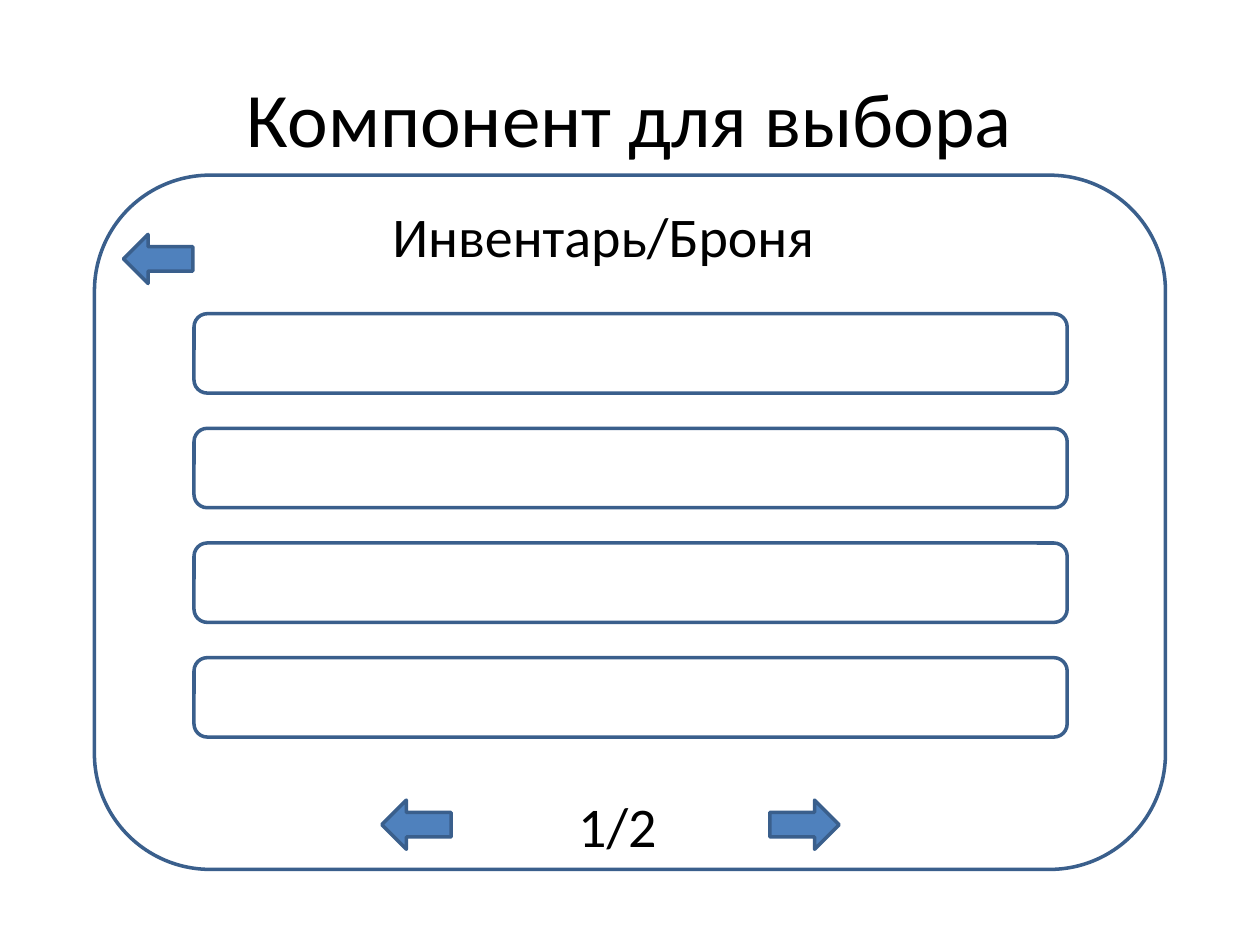
from dataclasses import dataclass
from typing import Optional

from pptx import Presentation
from pptx.dml.color import RGBColor
from pptx.enum.shapes import MSO_SHAPE as Shape
from pptx.enum.text import MSO_ANCHOR as Anchor, MSO_AUTO_SIZE as AutoSize, PP_ALIGN as Align
from pptx.slide import Slide
from pptx.util import Emu, Pt

EMU_PER_PX = 9144


@dataclass(frozen=True)
class Theme:
    font: str = "Calibri"
    text: RGBColor = RGBColor(0x00, 0x00, 0x00)
    accent: RGBColor = RGBColor(0x4F, 0x81, 0xBD)
    outline: RGBColor = RGBColor(0x3A, 0x5F, 0x8C)
    title_size: int = 44
    label_size: int = 32
    line_width: int = 2


@dataclass(frozen=True)
class Box:
    left: int
    top: int
    width: int
    height: int

    def emu(self) -> tuple[Emu, ...]:
        return tuple(px(value) for value in (self.left, self.top, self.width, self.height))


@dataclass(frozen=True)
class Figure:
    kind: Shape
    box: Box
    fill: Optional[RGBColor] = None


@dataclass(frozen=True)
class Label:
    text: str
    box: Box
    align: Align


THEME = Theme()
TITLE = Label("Компонент для выбора", Box(50, 30, 900, 125), Align.CENTER)
LABELS = [
    Label("Инвентарь/Броня", Box(294, 155, 370, 64), Align.CENTER),
    Label("1/2", Box(449, 623, 102, 64), Align.LEFT),
]
PANEL = Figure(Shape.ROUNDED_RECTANGLE, Box(75, 139, 850, 551))
ROW_COUNT, ROW_TOP, ROW_PITCH = 4, 249, 91
ROWS = [
    Figure(Shape.ROUNDED_RECTANGLE, Box(154, ROW_TOP + index * ROW_PITCH, 693, 63))
    for index in range(ROW_COUNT)
]
ARROWS = [
    Figure(kind, Box(left, top, 55, 39), THEME.accent)
    for kind, left, top in (
        (Shape.LEFT_ARROW, 98, 186),
        (Shape.LEFT_ARROW, 303, 635),
        (Shape.RIGHT_ARROW, 611, 635),
    )
]


def px(value: int) -> Emu:
    return Emu(value * EMU_PER_PX)


def write_text(shape, label: Label, size: int) -> None:
    shape.text_frame.text = label.text
    paragraph = shape.text_frame.paragraphs[0]
    paragraph.alignment = label.align
    paragraph.font.name = THEME.font
    paragraph.font.size = Pt(size)
    paragraph.font.color.rgb = THEME.text


def set_title(slide: Slide, label: Label) -> None:
    title = slide.shapes.title
    title.left, title.top, title.width, title.height = label.box.emu()
    title.text_frame.vertical_anchor = Anchor.MIDDLE
    write_text(title, label, THEME.title_size)


def draw_label(slide: Slide, label: Label) -> None:
    shape = slide.shapes.add_textbox(*label.box.emu())
    shape.text_frame.word_wrap = True
    shape.text_frame.auto_size = AutoSize.SHAPE_TO_FIT_TEXT
    write_text(shape, label, THEME.label_size)


def draw_figure(slide: Slide, figure: Figure) -> None:
    shape = slide.shapes.add_shape(figure.kind, *figure.box.emu())
    shape.shadow.inherit = False
    if figure.fill is None:
        shape.fill.background()
    else:
        shape.fill.solid()
        shape.fill.fore_color.rgb = figure.fill
    shape.line.color.rgb = THEME.outline
    shape.line.width = Pt(THEME.line_width)


def main() -> None:
    presentation = Presentation()
    presentation.slide_width, presentation.slide_height = px(1000), px(750)
    slide = presentation.slides.add_slide(presentation.slide_layouts[5])
    set_title(slide, TITLE)
    for figure in (PANEL, *ARROWS, *ROWS):
        draw_figure(slide, figure)
    for label in LABELS:
        draw_label(slide, label)
    presentation.save("out.pptx")


if __name__ == "__main__":
    main()
